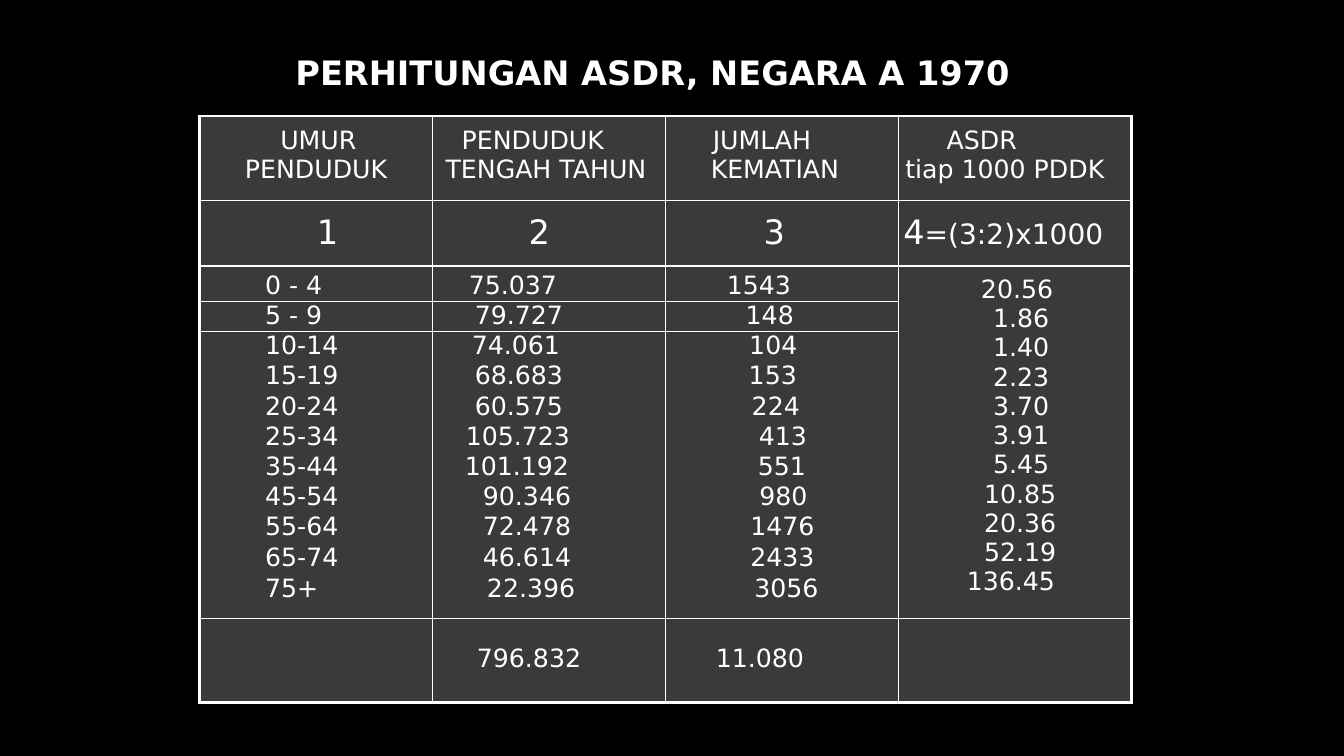
from lxml.etree import SubElement
from pptx import Presentation
from pptx.dml.color import RGBColor
from pptx.enum.text import MSO_ANCHOR, PP_ALIGN
from pptx.oxml import parse_xml
from pptx.oxml.ns import nsdecls, qn
from pptx.util import Pt

PX = 9144  # 100 px to the inch
FONT = "DejaVu Sans"
BLACK = RGBColor(0x00, 0x00, 0x00)
GREY = RGBColor(0x3A, 0x3A, 0x3A)
WHITE = RGBColor(0xFF, 0xFF, 0xFF)
NO_TABLE_STYLE = "{2D5ABB26-0587-4C30-8999-92F81FD0307C}"
OUTER, INNER = 2.25, 1

COLUMN_WIDTH = 231
ROW_HEIGHTS = [84, 65, 35] + [30] * 9 + [45, 83]
FIRST_AGE, LAST_AGE, TOTAL = 2, 12, 13
RATE = 3
RULES_BELOW = {0, 1, FIRST_AGE, LAST_AGE}

# age group, (population, indent), (deaths, left indent, right indent), (rate, indent)
AGE_ROWS = [
    ("0 - 4", ("75.037", 36), ("1543", 61, 0), ("20.56", 82)),
    ("5 - 9", ("79.727", 42), ("148", 0, 24), ("1.86", 94)),
    ("10-14", ("74.061", 39), ("104", 0, 17), ("1.40", 94)),
    ("15-19", ("68.683", 42), ("153", 0, 18), ("2.23", 94)),
    ("20-24", ("60.575", 42), ("224", 0, 12), ("3.70", 94)),
    ("25-34", ("105.723", 33), ("413", 2, 0), ("3.91", 94)),
    ("35-44", ("101.192", 32), ("551", 0, 0), ("5.45", 94)),
    ("45-54", ("90.346", 50), ("980", 3, 0), ("10.85", 85)),
    ("55-64", ("72.478", 50), ("1476", 1, 0), ("20.36", 85)),
    ("65-74", ("46.614", 50), ("2433", 1, 0), ("52.19", 85)),
    ("75+", ("22.396", 54), ("3056", 9, 0), ("136.45", 68)),
]


def write(paragraph, text, size=18, bold=False, align=None, left=0, first=0,
          right=0, spacing=None):
    """Append a run; left, first and right are paragraph indents in px."""
    run = paragraph.add_run()
    run.text = text
    run.font.name = FONT
    run.font.size = Pt(size)
    run.font.bold = bold
    run.font.color.rgb = WHITE
    if align is not None:
        paragraph.alignment = align
    if spacing:
        paragraph.line_spacing = Pt(spacing)
    properties = paragraph._p.get_or_add_pPr()
    for name, indent in (("marL", left), ("indent", first), ("marR", right)):
        if indent:
            properties.set(name, str(indent * PX))


def write_cell(cell, text, top=0, **formatting):
    cell.margin_top = top * PX
    paragraph = cell.text_frame.paragraphs[0]
    write(paragraph, text, **formatting)
    return paragraph


def draw_borders(cell, row, column):
    widths = {
        "L": OUTER if column == 0 else INNER,
        "R": OUTER if column == RATE else INNER,
    }
    rules = RULES_BELOW - {FIRST_AGE} if column == RATE else RULES_BELOW
    if row == 0:
        widths["T"] = OUTER
    elif row - 1 in rules:
        widths["T"] = INNER
    if row == TOTAL:
        widths["B"] = OUTER
    elif row in rules:
        widths["B"] = INNER
    properties = cell._tc.get_or_add_tcPr()
    for position, (side, width) in enumerate(widths.items()):
        properties.insert(position, parse_xml(
            f'<a:ln{side} {nsdecls("a")} w="{Pt(width)}"><a:solidFill>'
            f'<a:srgbClr val="{WHITE}"/></a:solidFill></a:ln{side}>'))


def add_grid(slide):
    frame = slide.shapes.add_table(
        len(ROW_HEIGHTS), 4, 198 * PX, 115 * PX,
        4 * COLUMN_WIDTH * PX, sum(ROW_HEIGHTS) * PX)
    table = frame.table
    table.first_row = table.horz_banding = False
    table._tbl.tblPr.find(qn("a:tableStyleId")).text = NO_TABLE_STYLE
    for column in table.columns:
        column.width = COLUMN_WIDTH * PX
    for index, height in enumerate(ROW_HEIGHTS):
        table.rows[index].height = height * PX
        for column in range(4):
            cell = table.cell(index, column)
            cell.margin_left = cell.margin_right = 0
            cell.margin_top = cell.margin_bottom = 0
            cell.fill.solid()
            cell.fill.fore_color.rgb = GREY
            draw_borders(cell, index, column)
    table.cell(FIRST_AGE, RATE).merge(table.cell(LAST_AGE, RATE))
    return table


def fill_headings(table):
    headings = [("UMUR PENDUDUK", 45, 35), ("PENDUDUK TENGAH TAHUN", 13, 16),
                ("JUMLAH KEMATIAN", 45, 2), ("ASDR", 48, 0)]
    for column, (heading, left, first) in enumerate(headings):
        write_cell(table.cell(0, column), heading, top=10, left=left, first=first)
    unit = table.cell(0, RATE).text_frame.add_paragraph()
    write(unit, "tiap 1000 PDDK", left=7)

    for column, (left, right) in enumerate([(23, 0), (0, 19), (0, 15)]):
        write_cell(table.cell(1, column), str(column + 1), top=13, size=24,
                   align=PP_ALIGN.CENTER, left=left, right=right)
    formula = write_cell(table.cell(1, RATE), "4", top=13, size=24, left=5)
    write(formula, "=(3:2)x1000", size=20)


def fill_ages(table):
    rates = table.cell(FIRST_AGE, RATE)
    rates.margin_top = 9 * PX
    for row, (age, population, deaths, rate) in enumerate(AGE_ROWS, FIRST_AGE):
        line = {"top": 5 if row == FIRST_AGE else 0,
                "spacing": 21.6 if row == LAST_AGE else 20.6}
        write_cell(table.cell(row, 0), age, left=65, **line)
        write_cell(table.cell(row, 1), population[0], left=population[1], **line)
        align = PP_ALIGN.LEFT if row == FIRST_AGE else PP_ALIGN.CENTER
        write_cell(table.cell(row, 2), deaths[0], left=deaths[1],
                   right=deaths[2], align=align, **line)
        if row == FIRST_AGE:
            paragraph = rates.text_frame.paragraphs[0]
        else:
            paragraph = rates.text_frame.add_paragraph()
        write(paragraph, rate[0], left=rate[1])


def shrink_empty_cells(table):
    """Keep the default text size of empty cells from stretching rows."""
    for cell in table.iter_cells():
        if not cell.text_frame.text:
            paragraph = cell.text_frame.paragraphs[0]._p
            SubElement(paragraph, qn("a:endParaRPr"), sz="1000")


def add_title(slide):
    title = slide.shapes.title
    title.left, title.top, title.width, title.height = (
        length * PX for length in (292, 49, 719, 43))
    frame = title.text_frame
    frame.margin_left = frame.margin_right = frame.margin_bottom = 0
    frame.margin_top = PX
    frame.vertical_anchor = MSO_ANCHOR.MIDDLE
    write(frame.paragraphs[0], "PERHITUNGAN ASDR, NEGARA A 1970", size=24,
          bold=True, align=PP_ALIGN.LEFT, left=1)


def main():
    presentation = Presentation()
    presentation.slide_width = 1333 * PX
    presentation.slide_height = 750 * PX
    slide = presentation.slides.add_slide(presentation.slide_layouts[5])
    slide.background.fill.solid()
    slide.background.fill.fore_color.rgb = BLACK
    add_title(slide)
    table = add_grid(slide)
    fill_headings(table)
    fill_ages(table)
    write_cell(table.cell(TOTAL, 1), "796.832", top=25, left=44)
    write_cell(table.cell(TOTAL, 2), "11.080", top=25, left=50)
    shrink_empty_cells(table)
    presentation.save("out.pptx")


if __name__ == "__main__":
    main()
